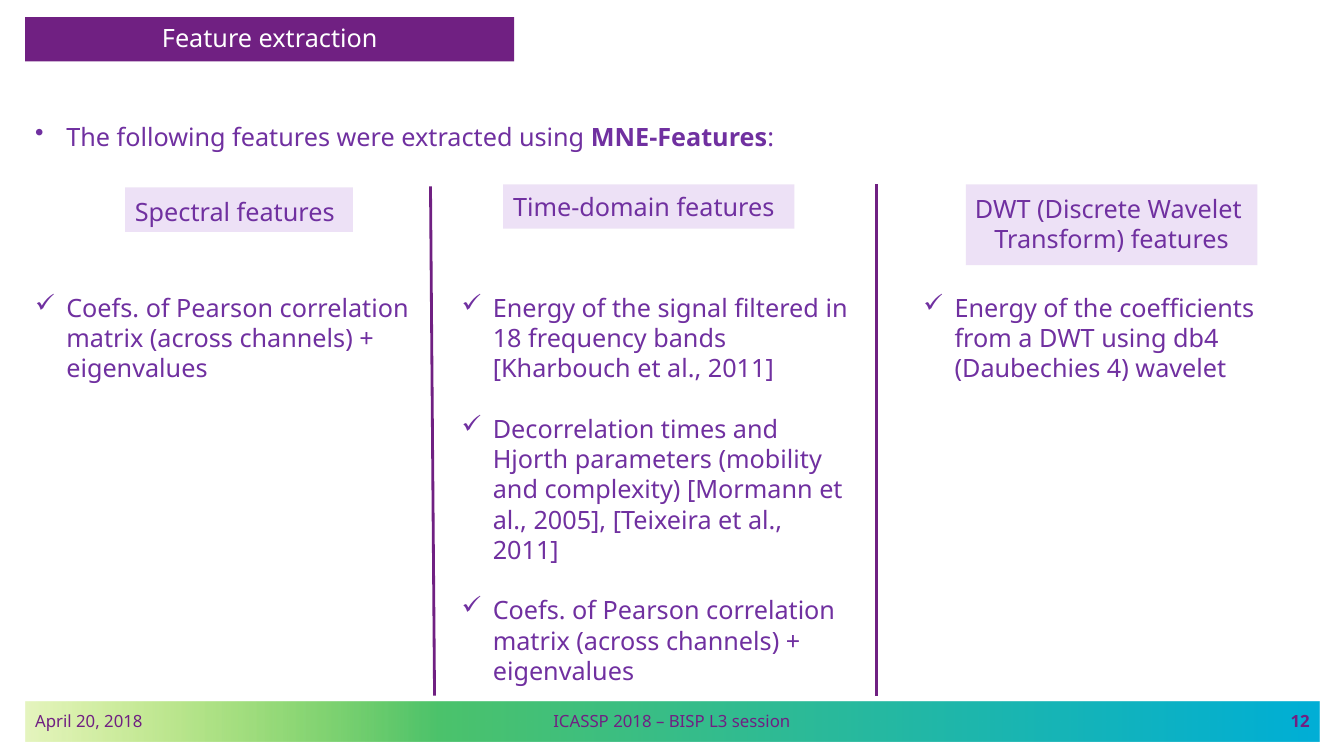
from lxml import etree
from pptx import Presentation
from pptx.dml.color import RGBColor
from pptx.enum.shapes import MSO_CONNECTOR, MSO_SHAPE
from pptx.enum.text import MSO_ANCHOR, MSO_AUTO_SIZE, PP_ALIGN
from pptx.oxml.ns import qn
from pptx.util import Pt

RECT, LINE = MSO_SHAPE.RECTANGLE, MSO_CONNECTOR.STRAIGHT
LEFT, CENTER, RIGHT = PP_ALIGN.LEFT, PP_ALIGN.CENTER, PP_ALIGN.RIGHT
TOP, MIDDLE = MSO_ANCHOR.TOP, MSO_ANCHOR.MIDDLE
FIXED = MSO_AUTO_SIZE.NONE

SCALE = 9144  # EMU per px, 100 px to the inch
FONT = "Noto Sans"
LEAD = Pt(21.6)
COLORS = {
    "plum": "702082", "text": "7030A0", "pill": "E3D1F1", "white": "FFFFFF",
    "lime": "97D700", "green": "4CC36C", "blue": "00AFD7",
}


def px(*vals):
    return [v * SCALE for v in vals]


def rgb(name):
    return RGBColor.from_string(COLORS[name])


def fade(color, pct):
    """Set the opacity of a srgbClr element in percent."""
    etree.SubElement(color, qn("a:alpha")).set("val", str(pct * 1000))


class Board:
    def __init__(self, deck):
        self.slide = deck.slides.add_slide(deck.slide_layouts[5])
        self.shapes = self.slide.shapes

    def label(self, frame, lines, color="text", size=18, align=LEFT,
              anchor=TOP, bold=None, lead=LEAD):
        """Fill a frame; each line is a list of (text, bold) runs or a string."""
        frame.word_wrap = True
        frame.auto_size = FIXED
        frame.vertical_anchor = anchor
        for i, line in enumerate(lines):
            par = frame.add_paragraph() if i else frame.paragraphs[0]
            par.alignment = align
            par.line_spacing = lead
            font = par.font
            font.name, font.size, font.bold = FONT, Pt(size), bold
            font.color.rgb = rgb(color)
            for text, strong in [(line, None)] if isinstance(line, str) else line:
                run = par.add_run()
                run.text = text
                if strong:
                    run.font.bold = True

    def title(self, box, text):
        head = self.shapes.title
        head.left, head.top, head.width, head.height = px(*box)
        head.fill.solid()
        head.fill.fore_color.rgb = rgb("plum")
        self.label(head.text_frame, [text], "white", align=CENTER)

    def rect(self, box):
        shape = self.shapes.add_shape(RECT, *px(*box))
        shape.shadow.inherit = False
        shape.line.fill.background()
        return shape

    def band(self, box, stops):
        """Draw a left-to-right gradient; stops are (place, colour, opacity)."""
        shape = self.rect(box)
        shape.fill.gradient()
        shape.fill.gradient_angle = 0
        grad = shape._element.spPr.find(qn("a:gradFill")).find(qn("a:gsLst"))
        for old in list(grad):
            grad.remove(old)
        for place, name, pct in stops:
            stop = etree.SubElement(grad, qn("a:gs"), pos=str(place * 1000))
            fade(etree.SubElement(stop, qn("a:srgbClr"), val=COLORS[name]), pct)

    def pill(self, box, lines, inset, align=LEFT):
        shape = self.rect(box)
        shape.fill.solid()
        shape.fill.fore_color.rgb = rgb("pill")
        fade(shape._element.spPr.find(qn("a:solidFill"))[0], 63)
        frame = shape.text_frame
        frame.margin_top = inset * SCALE
        self.label(frame, lines, align=align)
        frame.word_wrap = align == LEFT

    def text(self, box, lines, **style):
        frame = self.shapes.add_textbox(*px(*box)).text_frame
        self.label(frame, lines, **style)
        return frame

    def bullets(self, box, mark, lines):
        """Add a hanging list whose items stand one line apart."""
        for i, par in enumerate(self.text(box, lines).paragraphs):
            if i:
                par.space_before = LEAD
            props = par._p.get_or_add_pPr()
            props.set("marL", str(31 * SCALE))
            props.set("indent", str(-31 * SCALE))
            bullet = etree.Element(qn("a:buChar"), char=mark)
            props.find(qn("a:defRPr")).addprevious(bullet)

    def rule(self, ends):
        line = self.shapes.add_connector(LINE, *px(*ends))
        line.line.color.rgb = rgb("plum")
        line.line.width = Pt(2)
        etree.SubElement(line._element.spPr, qn("a:effectLst"))


def main():
    deck = Presentation()
    deck.slide_width, deck.slide_height = px(1333, 750)
    board = Board(deck)

    board.band((25, 696, 1284, 40),
               [(0, "lime", 25), (32, "green", 100), (100, "blue", 100)])
    for left, width, text, align, bold in [
        (25, 363, "April 20, 2018", LEFT, None),
        (408, 517, "ICASSP 2018 – BISP L3 session", CENTER, None),
        (946, 363, "12", RIGHT, True),
    ]:
        board.text((left, 695, width, 40), [text], color="plum", size=12,
                   align=align, anchor=MIDDLE, bold=bold, lead=None)

    board.title((25, 17, 485, 44), "Feature extraction")
    board.bullets((25, 115, 1284, 40), "•", [[
        ("The following features were extracted using ", None),
        ("MNE-Features", True), (":", None)]])

    board.rule((427, 185, 431, 690))
    board.rule((869, 183, 869, 690))

    board.pill((124, 186, 226, 44), ["Spectral features"], 9)
    board.pill((499, 183, 289, 44), ["Time-domain features"], 7)
    board.pill((958, 183, 289, 80),
               ["DWT (Discrete Wavelet ", "Transform) features"], 9, CENTER)

    pearson = ("Coefs. of Pearson correlation matrix (across channels) + "
               "eigenvalues")
    for left, height, items in [
        (25, 101, [pearson]),
        (448, 404, [
            "Energy of the signal filtered in 18 frequency bands "
            "[Kharbouch et al., 2011]",
            "Decorrelation times and Hjorth parameters (mobility and "
            "complexity) [Mormann et al., 2005], [Teixeira et al., 2011]",
            pearson]),
        (906, 101, ["Energy of the coefficients from a DWT using db4 "
                    "(Daubechies 4) wavelet"]),
    ]:
        board.bullets((left, 285, 403, height), "✓", items)

    deck.save("out.pptx")


if __name__ == "__main__":
    main()
